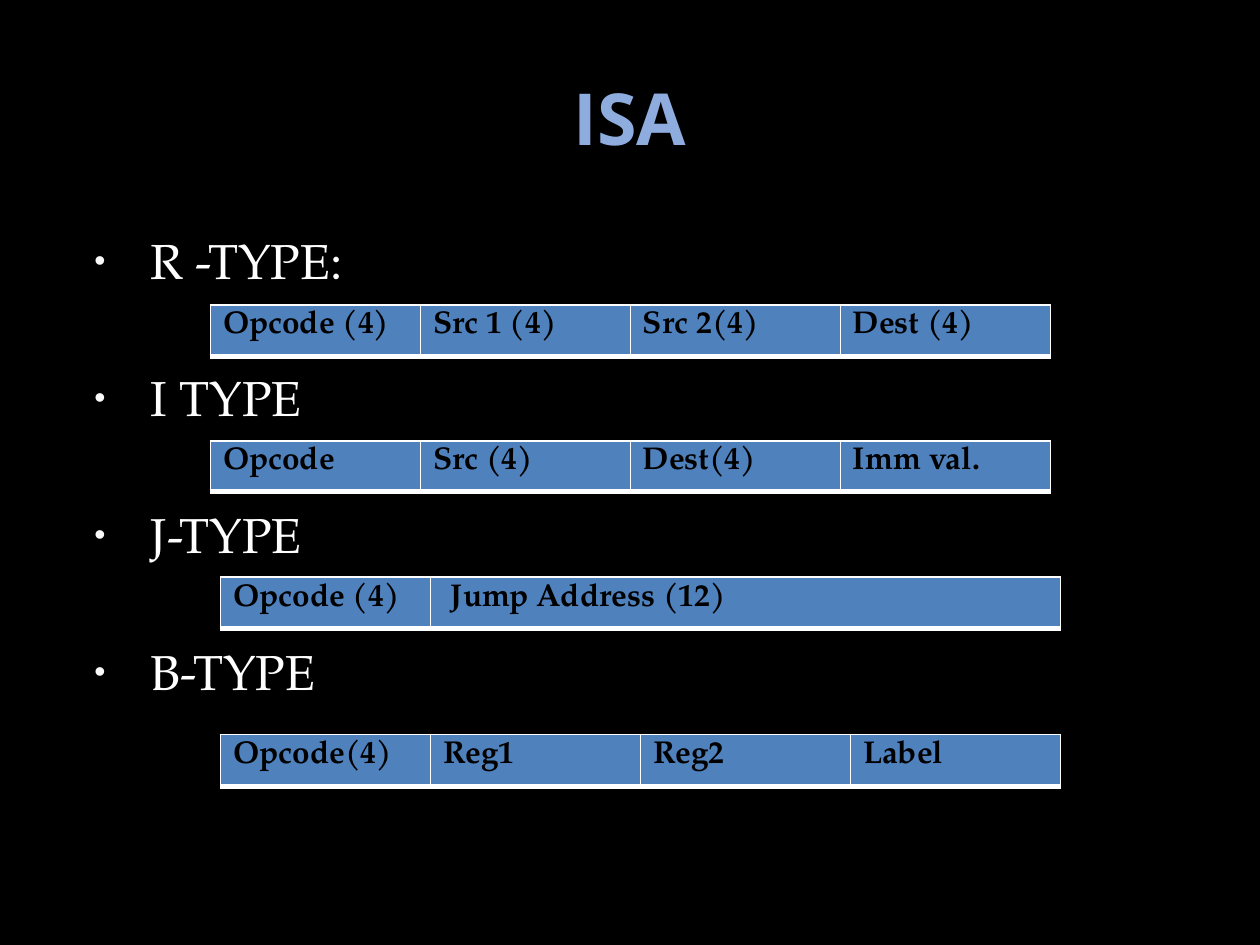
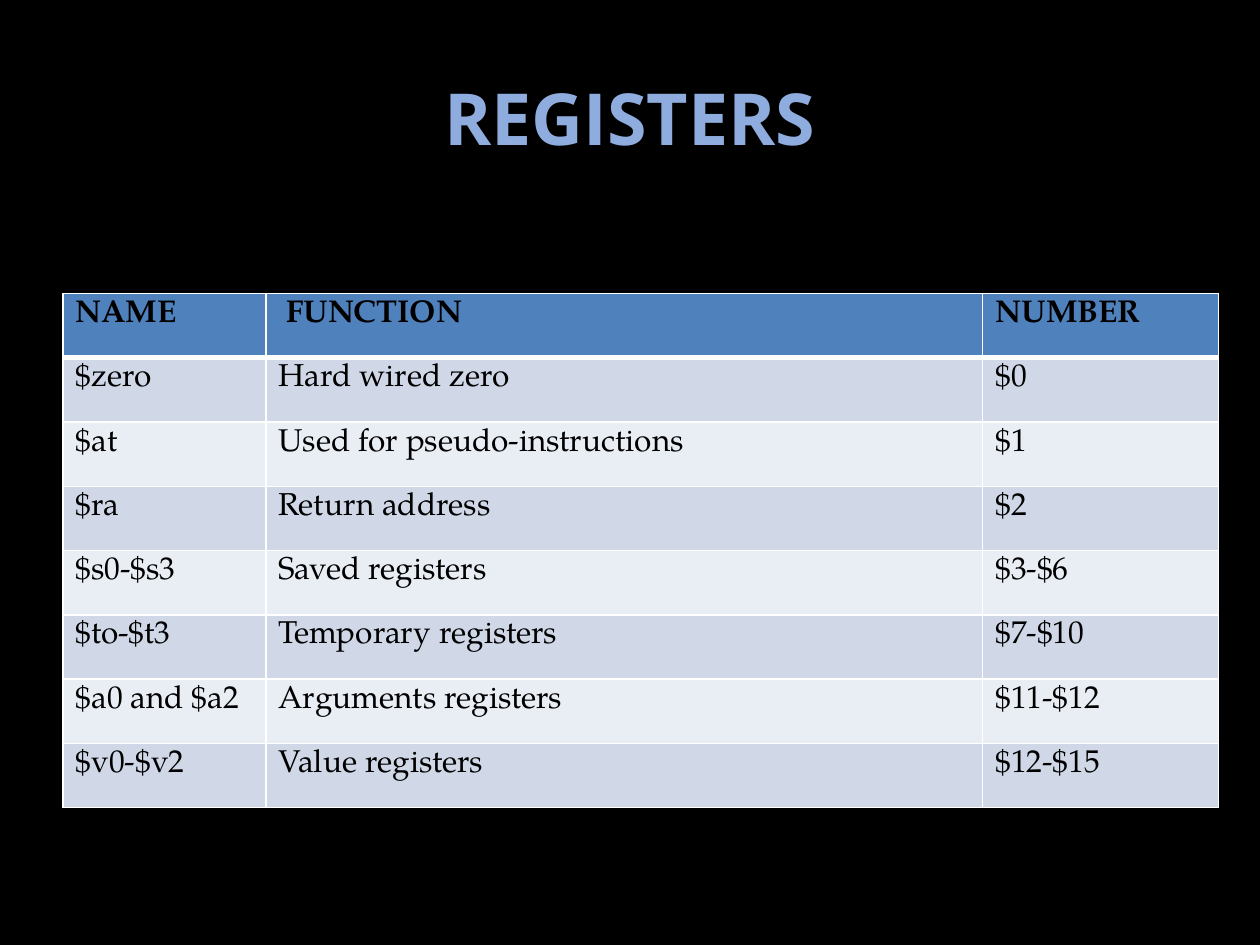
from pptx import Presentation
from pptx.dml.color import RGBColor as RGB
from pptx.enum.text import MSO_ANCHOR as Anchor, PP_ALIGN as Align
from pptx.oxml import parse_xml
from pptx.oxml.ns import nsdecls
from pptx.util import Inches, Pt

BLACK = RGB(0, 0, 0)
WHITE = RGB(255, 255, 255)
SKY = RGB(0x8F, 0xAC, 0xDE)
BLUE = RGB(0x4F, 0x81, 0xBD)
DARK = RGB(0xD0, 0xD8, 0xE8)
PALE = RGB(0xE9, 0xED, 0xF4)

SERIF = "TeX Gyre Pagella"
HEAD = {"name": "Open Sans", "size": Pt(41), "bold": True}
ITEM = {"name": SERIF, "size": Pt(28)}
CELL = {"name": SERIF, "size": Pt(18)}

QUARTER = 5 / 3
FOUR = [QUARTER] * 4
TYPES = [
    ("R -TYPE:", 1.67, 2.42, 0.41, FOUR,
     ["Opcode (4)", "Src 1 (4)", "Src 2(4)", "Dest (4)"]),
    ("I TYPE", 1.67, 3.5, 0.34, FOUR,
     ["Opcode", "Src (4)", "Dest(4)", "Imm val."]),
    ("J-TYPE", 1.75, 4.58, 0.41, [QUARTER, 3 * QUARTER],
     ["Opcode (4)", " Jump Address (12)"]),
    ("B-TYPE", 1.75, 5.83, 0.41, FOUR,
     ["Opcode(4)", "Reg1", "Reg2", "Label"]),
]
REGS = [
    ("NAME", " FUNCTION", "NUMBER"),
    ("$zero", "Hard wired zero", "$0"),
    ("$at", "Used for pseudo-instructions", "$1"),
    ("$ra", "Return address", "$2"),
    ("$s0-$s3", "Saved registers", "$3-$6"),
    ("$to-$t3", "Temporary registers", "$7-$10"),
    ("$a0 and $a2", "Arguments registers", "$11-$12"),
    ("$v0-$v2", "Value registers", "$12-$15"),
]


def style(font, form, color):
    for key, val in form.items():
        setattr(font, key, val)
    font.color.rgb = color


def add_box(slide, left, top, width, height):
    box = slide.shapes.add_textbox(*map(Inches, (left, top, width, height)))
    box.text_frame.word_wrap = True
    return box.text_frame


def add_slide(deck, title):
    slide = deck.slides.add_slide(deck.slide_layouts[6])
    slide.background.fill.solid()
    slide.background.fill.fore_color.rgb = BLACK
    frame = add_box(slide, 0.5, 0.3, 9, 1.25)
    frame.vertical_anchor = Anchor.MIDDLE
    para = frame.paragraphs[0]
    para.alignment = Align.CENTER
    run = para.add_run()
    run.text = title
    style(run.font, HEAD, SKY)
    return slide


def add_edges(cell, top, base):
    props = cell._tc.get_or_add_tcPr()
    for side, width in (("L", 1), ("R", 1), ("T", top), ("B", base)):
        props.append(parse_xml(
            f'<a:ln{side} {nsdecls("a")} w="{Pt(width)}"><a:solidFill>'
            f'<a:srgbClr val="{WHITE}"/></a:solidFill></a:ln{side}>'))


def add_grid(slide, left, top, high, cols, rows):
    size = map(Inches, (left, top, sum(cols), high * len(rows)))
    grid = slide.shapes.add_table(len(rows), len(cols), *size).table
    grid.first_row = grid.horz_banding = False
    for col, width in zip(grid.columns, cols):
        col.width = Inches(width)
    for r, row in enumerate(rows):
        grid.rows[r].height = Inches(high)
        fill = BLUE if r == 0 else DARK if r % 2 else PALE
        for c, text in enumerate(row):
            cell = grid.cell(r, c)
            add_edges(cell, 3 if r == 1 else 1, 3 if r == 0 else 1)
            cell.fill.solid()
            cell.fill.fore_color.rgb = fill
            run = cell.text_frame.paragraphs[0].add_run()
            run.text = text
            style(run.font, {**CELL, "bold": r == 0}, BLACK)


def add_list(slide, items):
    frame = add_box(slide, 0.5, 1.75, 9, 5.15)
    for n, text in enumerate(items):
        para = frame.add_paragraph() if n else frame.paragraphs[0]
        para.line_spacing = Pt(36)
        para.space_before = Pt(42.3 if n else 0)
        props = para._p.get_or_add_pPr()
        props.set("marL", str(Inches(0.6)))
        props.set("indent", str(Inches(-0.45)))
        for part in ('buClr><a:srgbClr val="F9F9F9"/></a:buClr>',
                     'buSzPct val="65000"/>',
                     'buFont typeface="Arial"/>', 'buChar char="•"/>'):
            tag, rest = part[:part.index(">")], part[part.index(">"):]
            lead = tag[:-1] if tag.endswith("/") else tag
            tail = "/" if tag.endswith("/") else ""
            props.append(parse_xml(f'<a:{lead} {nsdecls("a")}{tail}{rest}'))
        run = para.add_run()
        run.text = text
        style(run.font, ITEM, WHITE)


def main():
    deck = Presentation()
    deck.slide_width, deck.slide_height = Inches(10), Inches(7.5)

    isa = add_slide(deck, "ISA")
    add_list(isa, [kind[0] for kind in TYPES])
    for _, left, top, high, cols, row in TYPES:
        add_grid(isa, left, top, high, cols, [row])

    regs = add_slide(deck, "REGISTERS")
    add_grid(regs, 0.5, 2.33, 0.51, [1.61, 5.69, 1.87], REGS)
    deck.save("out.pptx")


if __name__ == "__main__":
    main()
